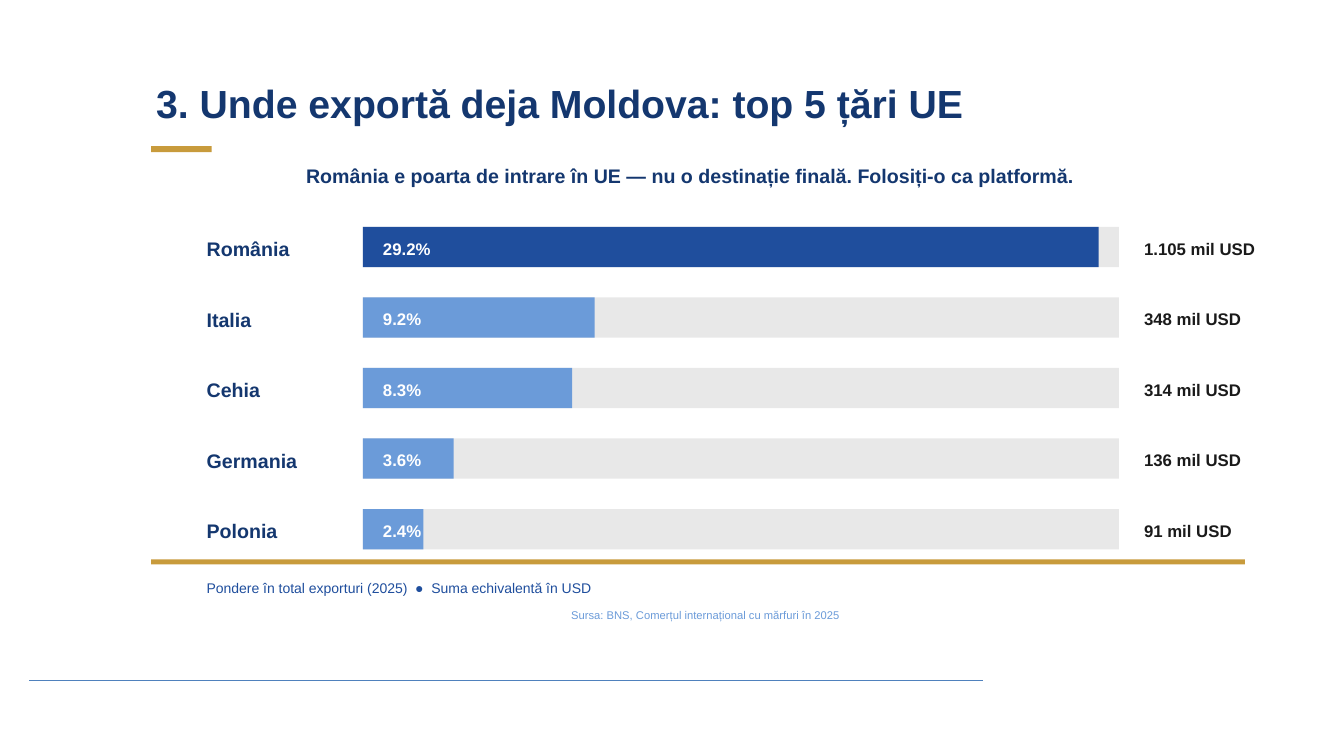
import pptx
import pptx.dml.color
import pptx.enum.shapes
import pptx.enum.text
import pptx.oxml
import pptx.util

Pt = pptx.util.Pt
ALIGN = pptx.enum.text.PP_ALIGN
ANCHOR = pptx.enum.text.MSO_ANCHOR

NAVY, BLUE, LIGHT_BLUE = "14376F", "1F4E9D", "6B9BD9"
GOLD, TRACK, INK, WHITE, RULE = "C89B3C", "E8E8E8", "1A1A1A", "FFFFFF", "4F81BD"

COUNTRIES = [
    ("România", 29.2, "1.105 mil USD"),
    ("Italia", 9.2, "348 mil USD"),
    ("Cehia", 8.3, "314 mil USD"),
    ("Germania", 3.6, "136 mil USD"),
    ("Polonia", 2.4, "91 mil USD"),
]
PT_PER_PERCENT = 18
BAR_HEIGHT = 28.8


def rgb(color):
    return pptx.dml.color.RGBColor.from_string(color)


def fill_text(sp, text, size, color, bold=True, align=ALIGN.LEFT, anchor=ANCHOR.TOP):
    tf = sp.text_frame
    tf.word_wrap = True
    tf.auto_size = pptx.enum.text.MSO_AUTO_SIZE.SHAPE_TO_FIT_TEXT
    tf.vertical_anchor = anchor
    tf.margin_left = tf.margin_right = Pt(3.6)
    tf.margin_top = tf.margin_bottom = Pt(1.44)
    p = tf.paragraphs[0]
    p.alignment = align
    p.line_spacing = 1.15
    r = p.add_run()
    r.text = text
    r.font.name = "Arial"
    r.font.size = Pt(size)
    r.font.bold = bold
    r.font.color.rgb = rgb(color)


def add_text(s, x, y, w, h, text, size, color, **style):
    sp = s.shapes.add_textbox(Pt(x), Pt(y), Pt(w), Pt(h))
    fill_text(sp, text, size, color, **style)


def add_rect(s, x, y, w, h, color):
    sp = s.shapes.add_shape(pptx.enum.shapes.MSO_SHAPE.RECTANGLE, Pt(x), Pt(y), Pt(w), Pt(h))
    sp.shadow.inherit = False
    sp.fill.solid()
    sp.fill.fore_color.rgb = rgb(color)
    sp.line.fill.background()


def add_header(s, x, y, w):
    title = s.shapes.title
    title.left, title.top, title.width, title.height = Pt(x), Pt(y), Pt(w), Pt(50.4)
    fill_text(title, "3. Unde exportă deja Moldova: top 5 țări UE", 28, NAVY)
    add_rect(s, x, y + 54, 43.2, 4.32, GOLD)
    add_text(s, x - 10.8, y + 62.64, w, 28.8,
             "România e poarta de intrare în UE — nu o destinație finală. Folosiți-o ca platformă.",
             14, NAVY, align=ALIGN.CENTER)


def add_country_row(s, x, y, h, country, share, amount, color):
    """Country name, share bar on its grey track, and amount, centred in height h."""
    bar_x, bar_y = x + 115.2, y + (h - BAR_HEIGHT) / 2
    add_text(s, x, y, 115.2, h, country, 14, NAVY, anchor=ANCHOR.MIDDLE)
    add_rect(s, bar_x, bar_y, 540, BAR_HEIGHT, TRACK)
    add_rect(s, bar_x, bar_y, share * PT_PER_PERCENT, BAR_HEIGHT, color)
    add_text(s, bar_x + 10.8, bar_y, 86.4, BAR_HEIGHT, f"{share}%", 12, WHITE,
             anchor=ANCHOR.MIDDLE)
    add_text(s, bar_x + 554.4, bar_y, 158.4, BAR_HEIGHT, amount, 12, INK,
             anchor=ANCHOR.MIDDLE)


def add_country_bars(s, x, y, h):
    row_h = h / len(COUNTRIES)
    for i, (country, share, amount) in enumerate(COUNTRIES):
        color = BLUE if i == 0 else LIGHT_BLUE
        add_country_row(s, x, y + i * row_h, row_h, country, share, amount, color)


def add_footer(s, x, y, w):
    add_rect(s, x, y, 781.2, 3.6, GOLD)
    add_text(s, x + 36, y + 10.8, w, 21.6,
             "Pondere în total exporturi (2025)  ●  Suma echivalentă în USD",
             10, BLUE, bold=False)
    add_text(s, x, y + 32.4, w, 21.6, "Sursa: BNS, Comerțul internațional cu mărfuri în 2025",
             8, LIGHT_BLUE, bold=False, align=ALIGN.CENTER)


def add_bottom_line(s, x, y, w):
    line = s.shapes.add_connector(pptx.enum.shapes.MSO_CONNECTOR.STRAIGHT,
                                  Pt(x + w), Pt(y), Pt(x), Pt(y))
    line.line.color.rgb = rgb(RULE)
    line.line.width = Pt(0.75)
    line._element.spPr.append(pptx.oxml.parse_xml(
        '<a:effectLst xmlns:a="http://schemas.openxmlformats.org/drawingml/2006/main"/>'))


def main():
    prs = pptx.Presentation()
    prs.slide_width, prs.slide_height = Pt(960), Pt(540)
    s = prs.slides.add_slide(prs.slide_layouts[5])
    add_bottom_line(s, 20.88, 486, 681.12)
    add_header(s, 108, 50.4, 792)
    add_country_bars(s, 144, 151.2, 252)
    add_footer(s, 108, 399.6, 792)
    prs.save("out.pptx")


if __name__ == "__main__":
    main()
